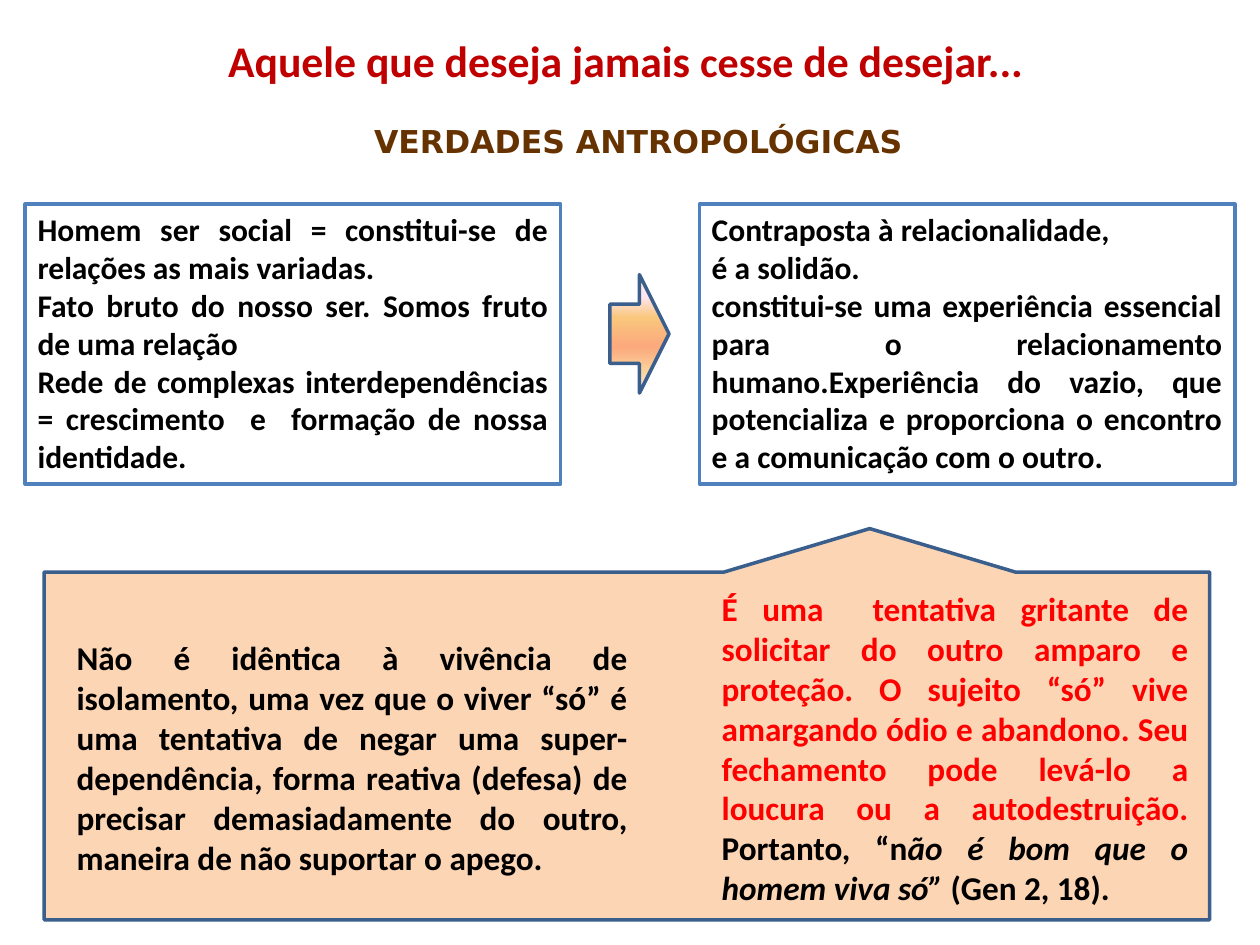
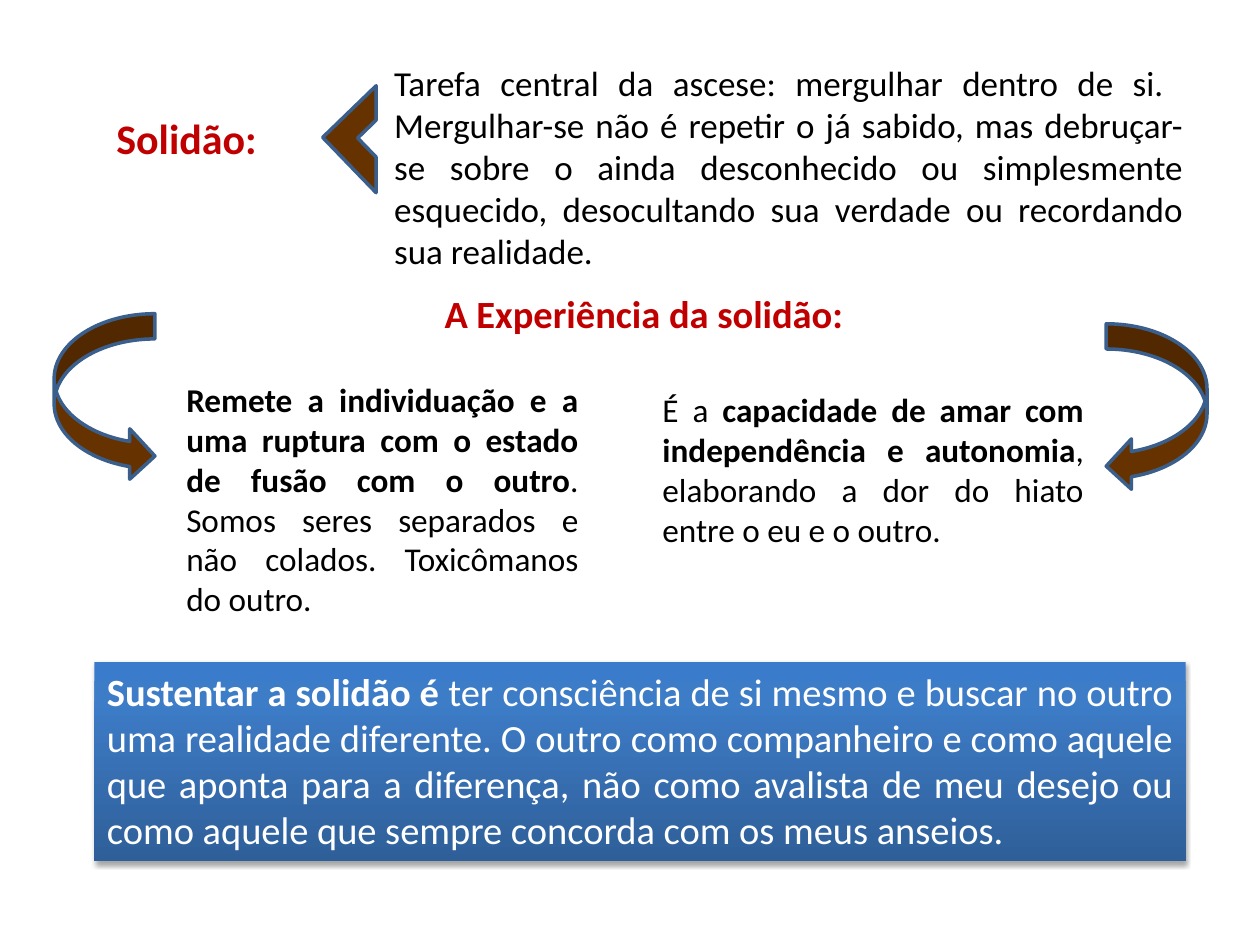
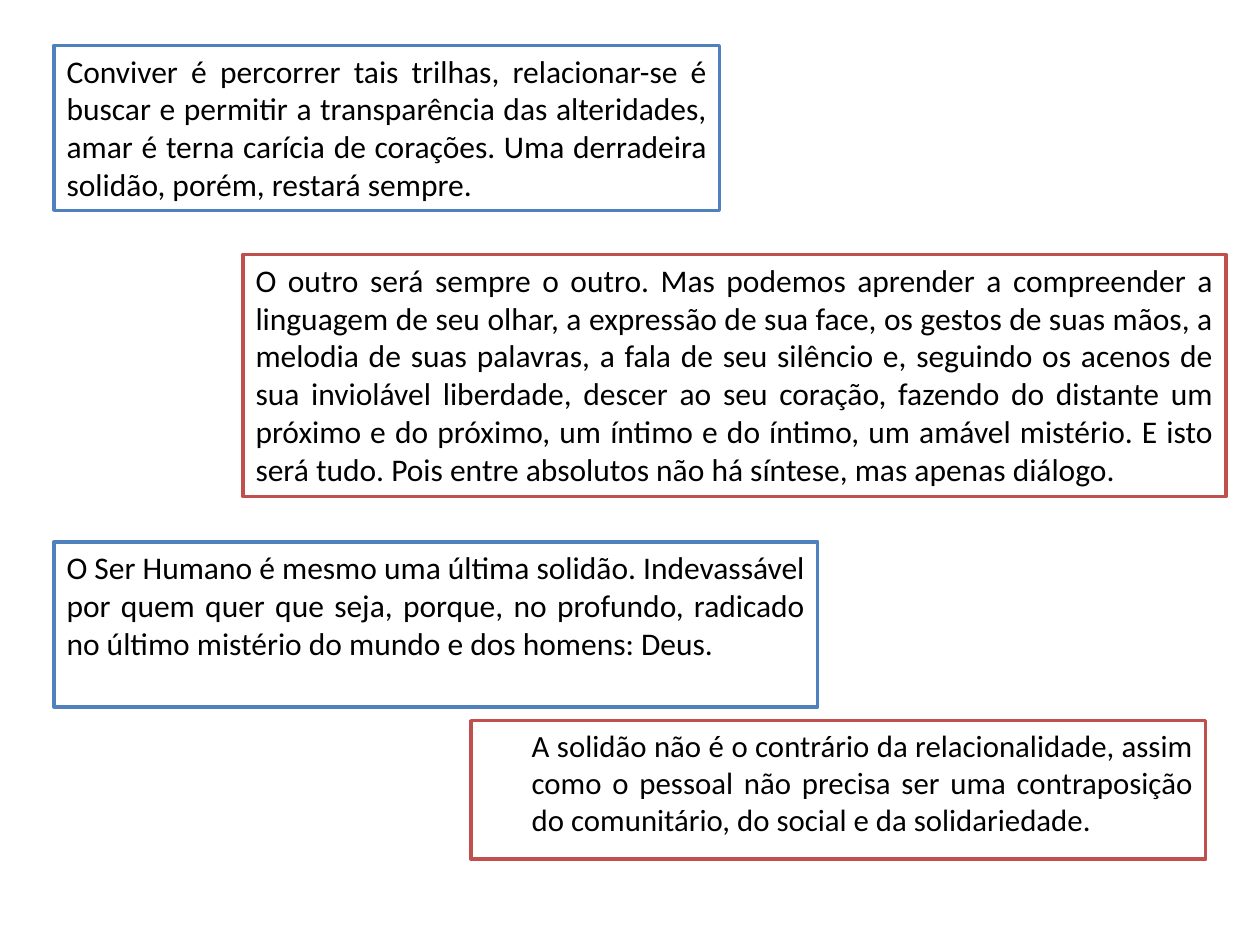
from dataclasses import dataclass

from lxml import etree
from pptx import Presentation
from pptx.dml.color import RGBColor
from pptx.enum.shapes import MSO_SHAPE
from pptx.enum.text import MSO_ANCHOR, PP_ALIGN
from pptx.oxml.ns import qn
from pptx.util import Inches, Pt

RECT = MSO_SHAPE.RECTANGLE
CENTER, JUST = PP_ALIGN.CENTER, PP_ALIGN.JUSTIFY
TOP, MIDDLE = MSO_ANCHOR.TOP, MSO_ANCHOR.MIDDLE


@dataclass(frozen=True)
class Theme:
    font: str = "Calibri"
    wide: str = "DejaVu Sans"
    black: str = "000000"
    white: str = "FFFFFF"
    title: str = "C00000"
    brown: str = "663300"
    alert: str = "FF0000"
    blue: str = "4F81BD"
    red: str = "C0504D"
    edge: str = "3A5F8C"
    peach: str = "FCD5B5"
    # gradient stops from top to bottom: percent, colour
    sunset: tuple = ((0, "FBEAC7"), (18, "FEE7F2"), (36, "FAC77D"),
                     (61, "FBA97D"), (82, "FBD49C"), (100, "FEE7F2"))
    ocean: tuple = ((0, "3A7CCB"), (20, "3D7CC7"), (100, "2F5F99"))
    head: float = 25
    label: float = 24
    sub: float = 22
    lead: float = 20
    note: float = 19
    body: float = 18
    small: float = 17.6
    stroke: float = 2


T = Theme()
deck = Presentation()
deck.slide_width, deck.slide_height = Inches(10), Inches(7.5)
COL, ROW = deck.slide_width / 100, deck.slide_height / 75
blank = deck.slide_layouts[6]


def draw(page, at, kind=None, fill=T.white, line=None):
    """Place a shape, or a text box without a kind; at is in columns and rows."""
    x, y, w, h = at
    place = [round(n) for n in (x * COL, y * ROW, w * COL, h * ROW)]
    if kind is None:
        return page.shapes.add_textbox(*place)
    shape = page.shapes.add_shape(kind, *place)
    shape.shadow.inherit = False
    if isinstance(fill, str):
        shape.fill.solid()
        shape.fill.fore_color.rgb = RGBColor.from_string(fill)
    else:
        shape.fill.gradient()
        shape.fill.gradient_angle = 270
        stops = shape.element.spPr.find(".//" + qn("a:gsLst"))
        stops.clear()
        for pos, tone in fill:
            stop = etree.SubElement(stops, qn("a:gs"), pos=str(pos * 1000))
            etree.SubElement(stop, qn("a:srgbClr"), val=tone)
    if line:
        shape.line.color.rgb = RGBColor.from_string(line)
        shape.line.width = Pt(T.stroke)
    else:
        shape.line.fill.background()
    return shape


def write(shape, paras, size, color=T.black, bold=False, align=JUST,
          anchor=TOP, font=T.font):
    """Fill a shape; a paragraph is a string or a list of (text, font changes)."""
    frame = shape.text_frame
    frame.word_wrap = True
    frame.vertical_anchor = anchor
    for i, runs in enumerate(paras):
        para = frame.add_paragraph() if i else frame.paragraphs[0]
        para.alignment = align
        para.font.name, para.font.size, para.font.bold = font, Pt(size), bold
        para.font.color.rgb = RGBColor.from_string(color)
        for text, changes in [(runs, {})] if isinstance(runs, str) else runs:
            run = para.add_run()
            run.text = text
            for key, value in changes.items():
                if key == "color":
                    run.font.color.rgb = RGBColor.from_string(value)
                else:
                    setattr(run.font, key, value)


# Slide 1: anthropological truths
page = deck.slides.add_slide(blank)
write(draw(page, (2.8, 2.1, 93.7, 5.4)),
      [[("Aquele que deseja jamais ", {}), ("cesse", {"size": Pt(T.label)}),
        (" de desejar...", {})]],
      T.head, T.title, True, CENTER, MIDDLE)
write(draw(page, (28.7, 9.2, 44.9, 4)), ["VERDADES ANTROPOLÓGICAS"],
      T.body, T.brown, True, font=T.wide)

truths = [
    ["Homem ser social = constitui-se de relações as mais variadas.",
     "Fato bruto do nosso ser. Somos fruto de uma relação",
     "Rede de complexas interdependências = crescimento  e  formação de nossa "
     "identidade."],
    ["Contraposta à relacionalidade,",
     "é a solidão.",
     "constitui-se uma experiência essencial para o relacionamento "
     "humano.Experiência do vazio, que potencializa e proporciona o encontro "
     "e a comunicação com o outro."],
]
for i, paras in enumerate(truths):
    box = draw(page, (2 + i * 53.5, 16.2, 42.5, 22.2), RECT, line=T.blue)
    write(box, paras, T.body, bold=True)

draw(page, (48.4, 21.8, 4.7, 9.4), MSO_SHAPE.RIGHT_ARROW, T.sunset, T.edge)
call = draw(page, (3.5, 45.4, 92.5, 27.6), MSO_SHAPE.RECTANGULAR_CALLOUT,
            T.peach, T.edge)
call.rotation = 180
write(draw(page, (5.1, 50.1, 45.7, 20.2)),
      ["Não é idêntica à vivência de isolamento, uma vez que o viver “só” é uma "
       "tentativa de negar uma super-dependência, forma reativa (defesa) de "
       "precisar demasiadamente do outro, maneira de não suportar o apego."],
      T.note, bold=True)
write(draw(page, (56.3, 46.2, 39, 26.6)),
      [[("É uma  tentativa gritante de solicitar do outro amparo e proteção. O "
         "sujeito “só” vive amargando ódio e abandono. Seu fechamento pode "
         "levá-lo a loucura ou a autodestruição. ", {"color": T.alert}),
        ("Portanto, “n", {}),
        ("ão é bom que o homem viva só”", {"italic": True}),
        (" (Gen 2, 18).", {})]],
      T.note, bold=True)

# Slide 2: the experience of solitude
page = deck.slides.add_slide(blank)
write(draw(page, (30.3, 4.4, 64.6, 17.8)),
      ["Tarefa central da ascese: mergulhar dentro de si.  Mergulhar-se não é "
       "repetir o já sabido, mas debruçar-se sobre o ainda desconhecido ou "
       "simplesmente esquecido, desocultando sua verdade ou recordando sua "
       "realidade."], T.lead)
write(draw(page, (7.5, 8.4, 17.4, 5)), [" Solidão:"], T.label, T.title, True)

banner = draw(page, (7.5, 52.5, 86.6, 15.8), RECT, T.ocean)
glow = etree.SubElement(
    banner.element.spPr.find(qn("a:effectLst")), qn("a:outerShdw"),
    blurRad=str(Pt(3.1)), dist=str(Pt(1.8)), dir="5400000", rotWithShape="0")
tone = etree.SubElement(glow, qn("a:srgbClr"), val=T.black)
etree.SubElement(tone, qn("a:alpha"), val="35000")
write(banner,
      [[("Sustentar a solidão é ", {"bold": True}),
        ("ter consciência de si mesmo e buscar no outro uma realidade "
         "diferente. O outro como companheiro e como aquele que aponta para a "
         "diferença, não como avalista de meu desejo ou como aquele que sempre "
         "concorda com os meus anseios.", {})]],
      T.sub, T.white)

write(draw(page, (13.8, 29.6, 33.1, 20.2)),
      [[("Remete a individuação e a uma ruptura com o estado de fusão com o "
         "outro", {"bold": True}),
        (". Somos seres separados e não colados. Toxicômanos do outro.", {})]],
      T.note)
write(draw(page, (51.6, 30.4, 35.4, 13.8)),
      [[("É a ", {}),
        ("capacidade de amar com independência e autonomia", {"bold": True}),
        (", elaborando a dor do hiato entre o eu e o outro.", {})]],
      T.note)
write(draw(page, (34.3, 22.5, 34, 4.7)), ["A Experiência da solidão:"],
      T.sub, T.title, True)

signs = [
    (MSO_SHAPE.CURVED_LEFT_ARROW, (87.8, 25.7, 8, 13.3), 0),
    (MSO_SHAPE.CURVED_RIGHT_ARROW, (4.3, 24.9, 8, 13.3), 0),
    (MSO_SHAPE.HALF_FRAME, (26.9, 8, 5.9, 6.1), 316),
]
for kind, at, turn in signs:
    draw(page, at, kind, T.brown, T.edge).rotation = turn

# Slide 3: living together
page = deck.slides.add_slide(blank)
quotes = [
    ((4.3, 3.6, 52.8, 13.1), T.blue, T.body,
     "Conviver é percorrer tais trilhas, relacionar-se é buscar e permitir a "
     "transparência das alteridades, amar é terna carícia de corações. Uma "
     "derradeira solidão, porém, restará sempre."),
    ((19.3, 20.2, 78, 19.2), T.red, T.body,
     "O outro será sempre o outro. Mas podemos aprender a compreender a "
     "linguagem de seu olhar, a expressão de sua face, os gestos de suas mãos, "
     "a melodia de suas palavras, a fala de seu silêncio e, seguindo os acenos "
     "de sua inviolável liberdade, descer ao seu coração, fazendo do distante "
     "um próximo e do próximo, um íntimo e do íntimo, um amável mistério. E "
     "isto será tudo. Pois entre absolutos não há síntese, mas apenas diálogo."),
    ((4.3, 43, 60.6, 13.1), T.blue, T.body,
     "O Ser Humano é mesmo uma última solidão. Indevassável por quem quer que "
     "seja, porque, no profundo, radicado no último mistério do mundo e dos "
     "homens: Deus."),
    ((37.4, 57.2, 58.3, 11), T.red, T.small,
     "A solidão não é o contrário da relacionalidade, assim como o pessoal não "
     "precisa ser uma contraposição do comunitário, do social e da "
     "solidariedade."),
]
for at, line, size, text in quotes:
    box = draw(page, at, RECT, line=line)
    write(box, [text], size)
box.text_frame.margin_left = Inches(0.48)

deck.save("out.pptx")
